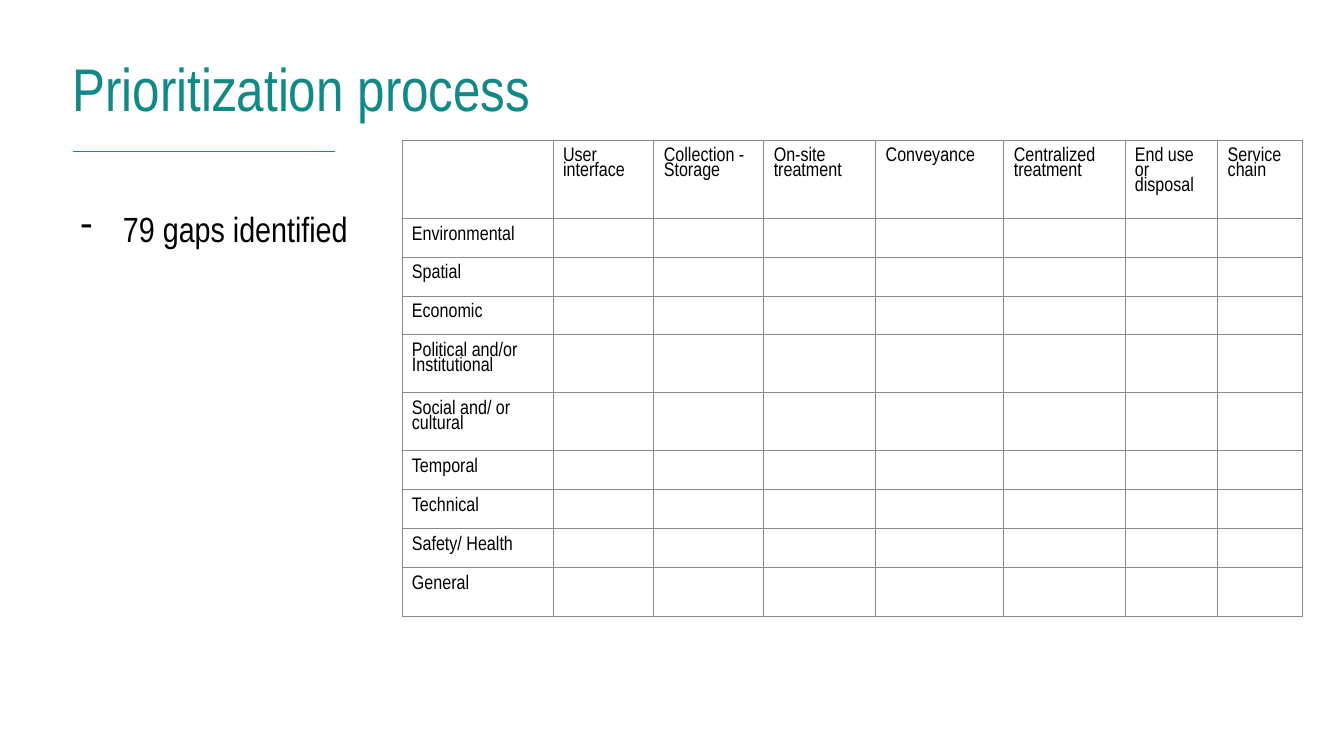
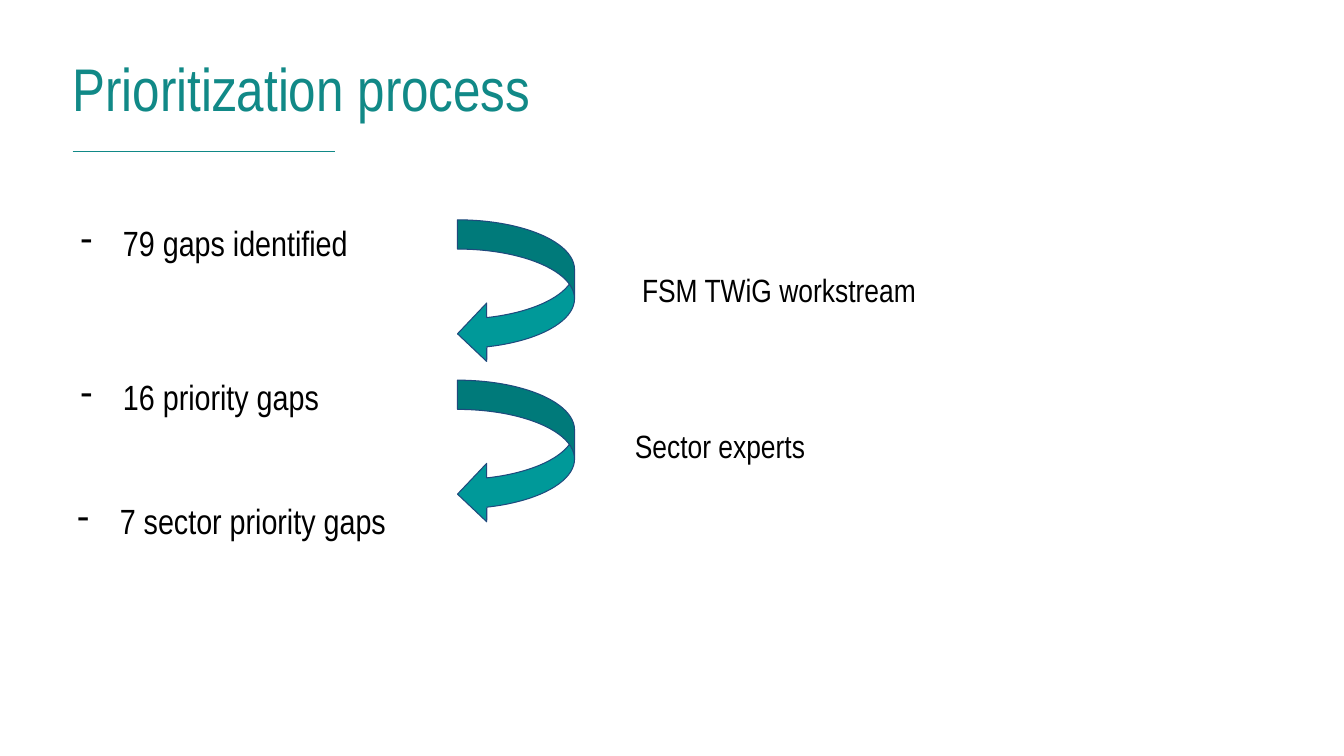
from lxml import etree
from pptx import Presentation
from pptx import util as u
from pptx.dml import color
from pptx.enum import shapes, text
from pptx.oxml import ns

TEAL, ARROW_TEAL, NAVY = "118987", "009999", "1F497D"
BLACK, GREY = "000000", "888888"
FONT = "Arial Narrow"
TITLE = "Prioritization process"
BODY_LEFT, BODY_TOP, BODY_WIDTH = 1.5, 4.88, 30.91

STAGES = ["User interface", "Collection - Storage", "On-site treatment", "Conveyance",
          "Centralized treatment", "End use or disposal", "Service chain"]
COLUMN_WIDTHS = [3.81, 2.54, 2.77, 2.82, 3.23, 3.05, 2.34, 2.13]
ONE_LINE, TWO_LINES = 0.98, 1.46
GAP_TYPES = [
    ("Environmental", ONE_LINE), ("Spatial", ONE_LINE), ("Economic", ONE_LINE),
    ("Political and/or Institutional", TWO_LINES), ("Social and/ or cultural", TWO_LINES),
    ("Temporal", ONE_LINE), ("Technical", ONE_LINE), ("Safety/ Health", ONE_LINE),
    ("General", 1.24),
]


def rgb(value):
    return color.RGBColor.from_string(value)


def add_child(parent, tag, **attributes):
    return etree.SubElement(parent, ns.qn(tag), attributes)


def set_margins(frame, across, down):
    frame.margin_left = frame.margin_right = u.Cm(across)
    frame.margin_top = frame.margin_bottom = u.Cm(down)


def style_runs(para, size, colour=BLACK):
    for span in para.runs:
        span.font.name = FONT
        span.font.size = u.Pt(size)
        span.font.color.rgb = rgb(colour)


def add_text(page, box, lines, size, colour=BLACK, margins=(0.33, 0.18)):
    frame = page.shapes.add_textbox(*map(u.Cm, box)).text_frame
    frame.word_wrap = True
    frame.vertical_anchor = text.MSO_ANCHOR.TOP
    set_margins(frame, *margins)
    frame.text = "\n".join(lines)
    for para in frame.paragraphs:
        style_runs(para, size, colour)
    return frame


def add_bullets(page, box, lines, spacing, gap=0):
    frame = add_text(page, box, lines, 25)
    for index, para in enumerate(frame.paragraphs):
        para.line_spacing = spacing
        if index:
            para.space_before = u.Pt(gap)
        properties = para._p.get_or_add_pPr()
        properties.set("marL", str(u.Cm(1.27)))
        properties.set("indent", str(u.Cm(-1.07)))
        bullet_colour = add_child(properties, "a:buClr")
        add_child(bullet_colour, "a:srgbClr", val=BLACK)
        add_child(properties, "a:buChar", char="-")


def add_titled_page(deck):
    page = deck.slides.add_slide(deck.slide_layouts[6])
    # Rule under the title
    left, top, width = 1.83, 3.81, 6.6
    rule = page.shapes.add_connector(shapes.MSO_CONNECTOR.STRAIGHT,
                                     *map(u.Cm, (left, top, left + width, top)))
    rule.line.color.rgb = rgb(TEAL)
    rule.line.width = u.Pt(0.75)
    add_child(rule._element.spPr, "a:effectLst")
    # Title
    add_text(page, (1.5, 1.12, 30.91, 2.97), [TITLE], 43, TEAL)
    return page


def style_cell(cell, label):
    properties = cell._tc.get_or_add_tcPr()
    for side in ("a:lnL", "a:lnR", "a:lnT", "a:lnB"):
        border = add_child(properties, side, w=str(u.Pt(0.75)))
        fill = add_child(border, "a:solidFill")
        add_child(fill, "a:srgbClr", val=GREY)
    cell.fill.background()
    # Empty cells need no margins, which keeps the rows low
    margin = 0.25 if label else 0
    set_margins(cell, margin, margin)
    if label:
        cell.text_frame.text = label
        para = cell.text_frame.paragraphs[0]
        para.line_spacing = 0.8
        style_runs(para, 14)


def add_gap_table(page, left, top):
    heights = [1.97] + [height for _, height in GAP_TYPES]
    box = (left, top, sum(COLUMN_WIDTHS), sum(heights))
    table = page.shapes.add_table(len(heights), len(COLUMN_WIDTHS), *map(u.Cm, box)).table
    table.first_row = table.horz_banding = False
    for column, width in zip(table.columns, COLUMN_WIDTHS):
        column.width = u.Cm(width)
    for row, height in zip(table.rows, heights):
        row.height = u.Cm(height)
    blanks = [""] * len(STAGES)
    grid = [[""] + STAGES] + [[name] + blanks for name, _ in GAP_TYPES]
    for row, labels in zip(table.rows, grid):
        for cell, label in zip(row.cells, labels):
            style_cell(cell, label)


def add_step(page, arrow_left, arrow_top, label_left, label_top, label):
    arrow = page.shapes.add_shape(shapes.MSO_SHAPE.CURVED_LEFT_ARROW,
                                  *map(u.Cm, (arrow_left, arrow_top, 2.95, 3.61)))
    arrow.shadow.inherit = False
    for index, value in enumerate((0.25, 0.5, 0.25)):
        arrow.adjustments[index] = value
    arrow.fill.solid()
    arrow.fill.fore_color.rgb = rgb(ARROW_TEAL)
    arrow.line.color.rgb = rgb(NAVY)
    arrow.line.width = u.Pt(0.75)
    add_text(page, (label_left, label_top, 17.7, 1.5), [label], 23, margins=(0.25, 0.25))


def build_gaps_page(deck):
    page = add_titled_page(deck)
    add_bullets(page, (BODY_LEFT, BODY_TOP, BODY_WIDTH, 10.31), ["79 gaps identified"], 1.15)
    add_gap_table(page, 10.13, 3.53)


def build_priorities_page(deck):
    page = add_titled_page(deck)
    # Gaps left after each step
    add_bullets(page, (BODY_LEFT, BODY_TOP, BODY_WIDTH, 6.22),
                ["79 gaps identified", "16 priority gaps"], 1.5, gap=65)
    add_bullets(page, (1.42, 11.89, 11.86, 2.97), ["7 sector priority gaps"], 1.5)
    # Who narrows them down
    add_step(page, 11.53, 5.54, 15.93, 6.55, "FSM TWiG workstream")
    add_step(page, 11.53, 9.58, 15.75, 10.49, "Sector experts")


def main():
    deck = Presentation()
    deck.slide_width, deck.slide_height = u.Cm(33.87), u.Cm(19.05)
    build_gaps_page(deck)
    build_priorities_page(deck)
    deck.save("out.pptx")


if __name__ == "__main__":
    main()
